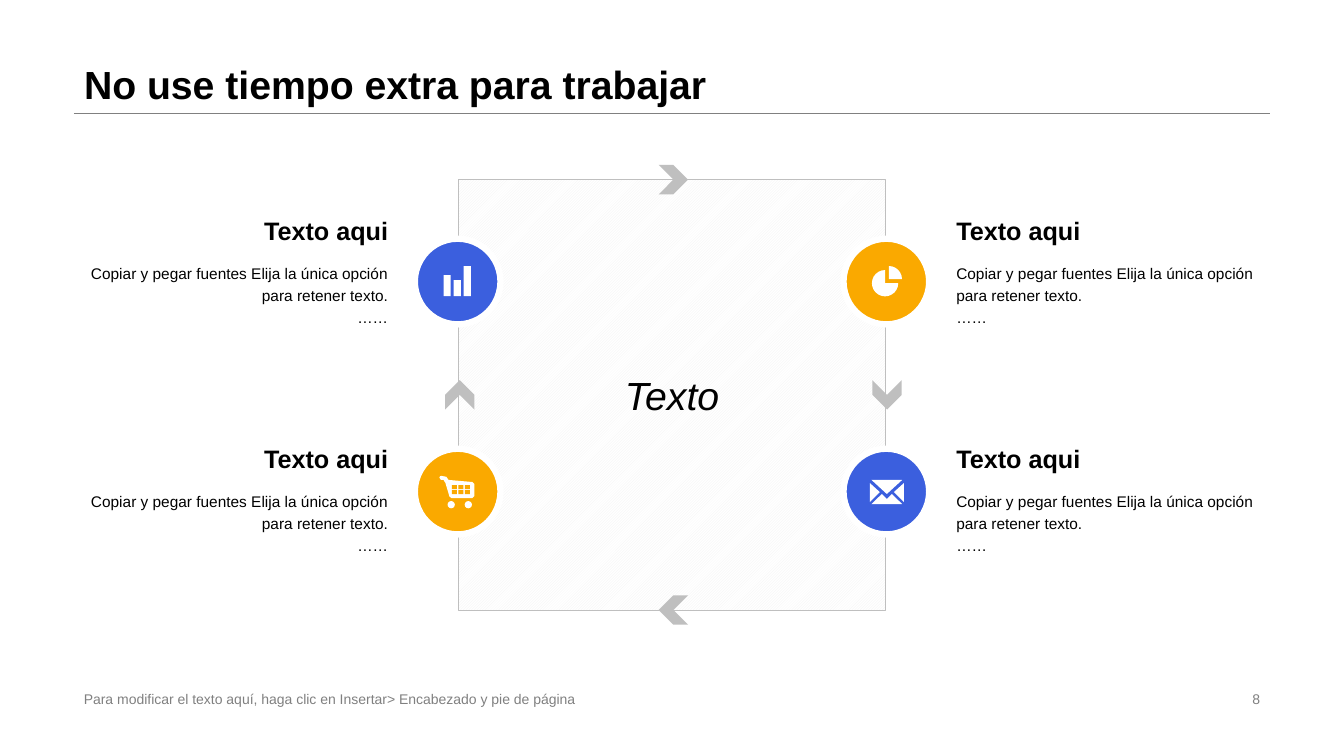
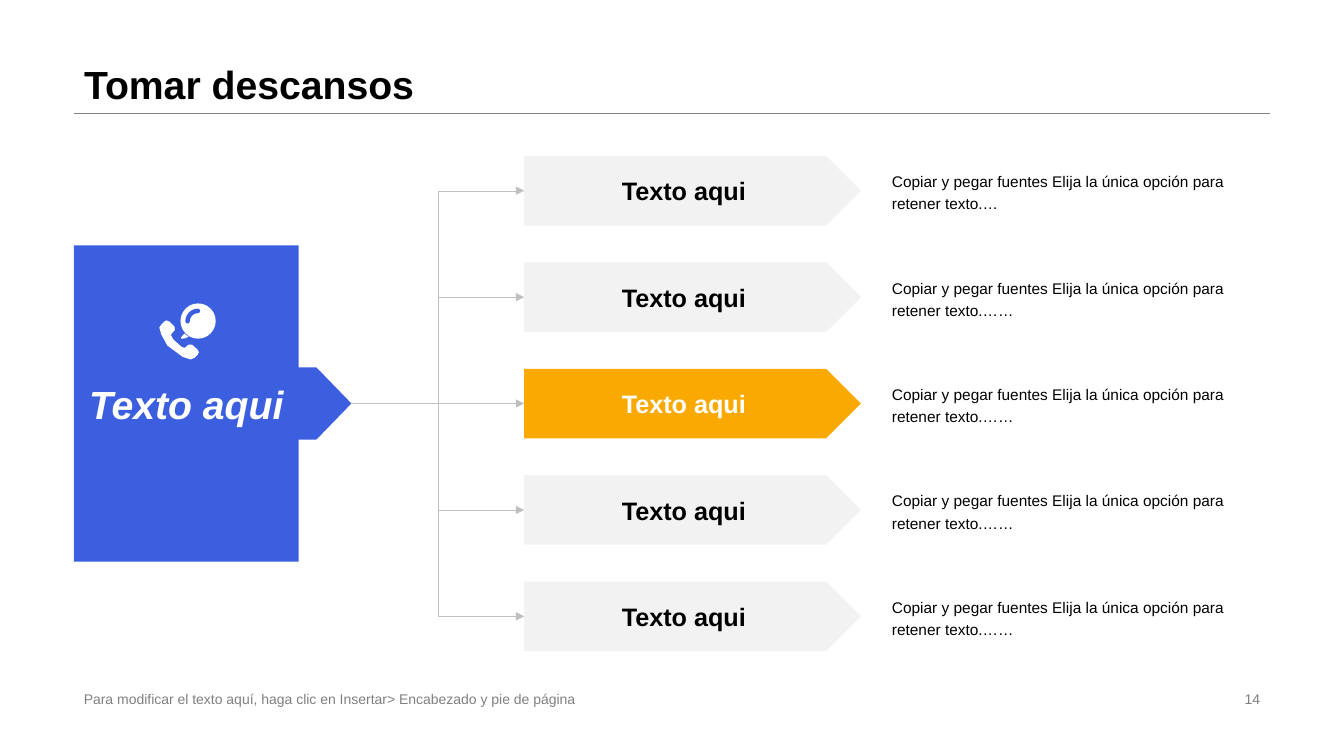
"""Build two Spanish template slides: a four-step cycle and a five-way branch."""
from dataclasses import dataclass

from lxml import etree
from pptx import Presentation
from pptx import util as u
from pptx.dml import color
from pptx.enum import dml, shapes, text
from pptx.oxml import ns

KIND = shapes.MSO_SHAPE
LINK = shapes.MSO_CONNECTOR
ALIGN = text.PP_ALIGN
ANCHOR = text.MSO_ANCHOR


@dataclass(frozen=True)
class Theme:
    """Colours, type sizes and page edges, lengths in points."""
    font: str = "Arial"
    ink: str = "000000"
    white: str = "FFFFFF"
    blue: str = "3B5FDE"
    gold: str = "FAA900"
    pale: str = "F2F2F2"
    edge: str = "BFBFBF"
    gray: str = "808080"
    big: int = 28
    head: int = 18
    body: int = 11
    note: int = 10
    hair: float = 0.25
    left: float = 52.8
    right: float = 907.2


T = Theme()
HEAD = "Texto aqui"
BODY = "Copiar y pegar fuentes Elija la única opción para retener texto."
FOOT = "Para modificar el texto aquí, haga clic en Insertar> Encabezado y pie de página"


def rgb(code):
    """Turn a hex code into a colour."""
    return color.RGBColor.from_string(code)


def put(item, **vals):
    """Set each named attribute on an item."""
    for name, val in vals.items():
        setattr(item, name, val)


def place(item, x, y, w, h):
    """Move and size an item."""
    put(item, left=u.Pt(x), top=u.Pt(y), width=u.Pt(w), height=u.Pt(h))


def write(item, lines, size, hue=T.ink, align=ALIGN.LEFT, anchor=ANCHOR.MIDDLE,
          gap=None, bold=False, slant=False):
    """Fill an item with formatted paragraphs."""
    frame = item.text_frame
    frame.text = "\n".join(lines)
    put(frame, word_wrap=True, auto_size=text.MSO_AUTO_SIZE.NONE, vertical_anchor=anchor)
    for para in frame.paragraphs:
        put(para, alignment=align)
        if gap:
            put(para, line_spacing=gap)
        for run in para.runs:
            put(run.font, name=T.font, size=u.Pt(size), bold=bold, italic=slant)
            run.font.color.rgb = rgb(hue)


def label(slide, box, lines, size, **form):
    """Add a text box."""
    item = slide.shapes.add_textbox(*map(u.Pt, box))
    write(item, lines, size, **form)


def paint(item, fill=None, line=None, width=T.hair):
    """Set the fill and outline, without a shadow."""
    item.shadow.inherit = False
    if fill:
        item.fill.solid()
        item.fill.fore_color.rgb = rgb(fill)
    else:
        item.fill.background()
    if line:
        item.line.color.rgb = rgb(line)
        item.line.width = u.Pt(width)
    else:
        item.line.fill.background()


def shape(slide, kind, box, fill=None, line=None, width=T.hair, adj=(), turn=0):
    """Add a preset shape."""
    item = slide.shapes.add_shape(kind, *map(u.Pt, box))
    for n, val in enumerate(adj):
        item.adjustments[n] = val
    item.rotation = turn
    paint(item, fill, line, width)
    return item


def poly(slide, x, y, dots, fill=T.white):
    """Add a closed outline with its dots measured from x, y."""
    dots = [(u.Pt(x + dx), u.Pt(y + dy)) for dx, dy in dots]
    pen = slide.shapes.build_freeform(*dots[0], scale=1.0)
    pen.add_line_segments(dots[1:], close=True)
    paint(pen.convert_to_shape(), fill)


def link(slide, start, end, hue, kind=LINK.STRAIGHT, arrow=False):
    """Add a hairline, with an arrowhead if asked."""
    item = slide.shapes.add_connector(kind, *map(u.Pt, start + end))
    item.line.color.rgb = rgb(hue)
    item.line.width = u.Pt(T.hair)
    props = item.element.spPr
    if arrow:
        etree.SubElement(props.find(ns.qn("a:ln")), ns.qn("a:tailEnd"), type="triangle")
    etree.SubElement(props, ns.qn("a:effectLst"))


def page(deck, title, number):
    """Add a slide with its title, rule, footer and number."""
    slide = deck.slides.add_slide(deck.slide_layouts[5])
    head = slide.shapes.title
    wide = T.right - T.left
    place(head, T.left, 0, wide, 80.6)
    write(head, [title], T.big, anchor=ANCHOR.BOTTOM, gap=0.9, bold=True)
    link(slide, (T.left, 80.6), (T.right, 80.6), T.gray)
    label(slide, (T.left, 491, 379, 16.6), [FOOT], T.note, hue=T.gray)
    label(slide, (T.right - 229, 491, 229, 16.6), [number], T.note,
          hue=T.gray, align=ALIGN.RIGHT)
    return slide


def bars(slide, x, y, hue):
    """Draw a bar chart icon."""
    for n, top in enumerate((-4.6, -1, -11)):
        shape(slide, KIND.RECTANGLE, (x - 10.1 + 7.2 * n, y + top, 5.2, 10.5 - top), T.white)


def pie(slide, x, y, hue):
    """Draw a pie chart icon with one slice pulled out."""
    for dx, dy, adj in ((-10.3, -8.2, (0, 162)), (-7.6, -11.1, (162, 0))):
        shape(slide, KIND.PIE, (x + dx, y + dy, 18.8, 18.8), T.white, adj=adj)


def cart(slide, x, y, hue):
    """Draw a shopping cart icon."""
    poly(slide, x, y, [
        (-13, -9.9), (-12.5, -11), (-11.5, -11.2), (-8, -10.5), (-6.5, -8.3),
        (10.6, -6.8), (11.9, -5.4), (11.9, 3.2), (10.4, 4.7), (-4.3, 4.7),
        (-5.8, 3.6), (-8.7, -6.1), (-10.1, -8.3), (-12, -8.4)])
    for col in range(3):
        for row in range(2):
            shape(slide, KIND.RECTANGLE,
                  (x - 4.1 + 4.6 * col, y - 4.6 + 3.6 * row, 3.6, 2.9), hue)
    for dx in (-7.2, 5):
        shape(slide, KIND.OVAL, (x + dx, y + 6.8, 5.2, 5.2), T.white)


def mail(slide, x, y, hue):
    """Draw an envelope icon."""
    for side in (-1, 1):
        poly(slide, x + 0.4, y, [(12.2 * side, -6.1), (12.2 * side, 7.6), (5 * side, 0.4)])
    poly(slide, x + 0.4, y, [(-11, -8.3), (11, -8.3), (0, 1.8)])
    poly(slide, x + 0.4, y, [(-11, 9), (-3.6, 1.8), (0, 5.4), (3.6, 1.8), (11, 9)])


def phone(slide, x, y, hue):
    """Draw a handset with a speech bubble."""
    poly(slide, x, y, [
        (5, 12.2), (7.2, 13), (8.6, 14.4), (10.8, 16.6), (11.1, 19), (8.6, 22),
        (8.4, 23), (10.1, 25.9), (15.8, 31), (18, 31.9), (20.9, 29.5), (23.4, 29.5),
        (27.4, 33.1), (28.2, 34.9), (27.4, 36.7), (25.2, 38.9), (22.3, 40.1),
        (16.6, 38.2), (5.8, 30.2), (1.4, 22.3), (0, 17.3), (1.4, 15.1), (3.6, 13)])
    shape(slide, KIND.OVAL, (x + 15.1, y, 25.2, 25.2), T.white)
    poly(slide, x, y, [(15.5, 24.3), (18, 21.6), (20.9, 23.8), (18.4, 25), (15.8, 25.2)])
    glint = shape(slide, KIND.ARC, (x + 20.2, y + 5.4, 14.8, 14.8),
                  line=hue, width=3.2, adj=(108, 162))
    glint.element.spPr.find(ns.qn("a:ln")).set("cap", "rnd")


def cycle(slide):
    """Draw the square loop with four badges and their texts."""
    mid, level, half, tall, disc, tip = 480, 282, 152.6, 153.7, 61.2, 21
    frame = shape(slide, KIND.RECTANGLE,
                  (mid - half, level - tall, 2 * half, 2 * tall), line=T.edge)
    frame.fill.patterned()
    frame.fill.pattern = dml.MSO_PATTERN.DARK_UPWARD_DIAGONAL
    frame.fill.fore_color.rgb = rgb(T.pale)
    frame.fill.back_color.rgb = rgb(T.white)
    write(frame, ["Texto"], T.big, align=ALIGN.CENTER, slant=True)

    for side, row, hue, icon in ((1, 0, T.gold, pie), (-1, 0, T.blue, bars),
                                 (1, 1, T.blue, mail), (-1, 1, T.gold, cart)):
        x, y = mid + 153.1 * side, 201.1 + 150 * row
        shape(slide, KIND.OVAL, (x - disc / 2, y - disc / 2, disc, disc), hue, T.white, 4.5)
        icon(slide, x, y, hue)
        wide = 231.2
        left = T.right - wide if side > 0 else T.left + 0.4
        top = 147.6 + 162.8 * row
        align = ALIGN.LEFT if side > 0 else ALIGN.RIGHT
        label(slide, (left, top, wide, 34.6), [HEAD], T.head, align=align, bold=True)
        label(slide, (left, top + 34.6, wide, 71.3), [BODY, "……"], T.body,
              align=align, anchor=ANCHOR.TOP, gap=1.2)

    for n, (dx, dy) in enumerate(((0, -1), (1, 0), (0, 1), (-1, 0))):
        x, y = mid + half * dx + 1, level + tall * dy
        shape(slide, KIND.CHEVRON, (x - tip / 2, y - tip / 2, tip, tip), T.edge, turn=90 * n)


def branch(slide):
    """Draw the callout and the five arrows it leads to."""
    top, step, tall, left, level = 111.4, 76, 49.7, 374.4, 288.2
    root = shape(slide, KIND.RIGHT_ARROW_CALLOUT, (T.left, level - 113, 198.2, 226),
                 T.blue, adj=(0.261, 0.13, 0.126, 0.81))
    write(root, [HEAD], T.big, hue=T.white, align=ALIGN.CENTER, bold=True, slant=True)
    phone(slide, 113.8, 216.7, T.blue)
    for n in range(5):
        y = top + step * n
        main = n == 2
        plate = shape(slide, KIND.PENTAGON, (left, y, 240.6, tall), T.gold if main else T.pale)
        write(plate, [HEAD], T.head, hue=T.white if main else T.ink,
              align=ALIGN.CENTER, bold=True)
        end = level if main else y + tall / 2
        link(slide, (T.left + 198.2, level), (left, end), T.edge,
             LINK.STRAIGHT if main else LINK.ELBOW, arrow=True)
        label(slide, (630, y, T.right - 630, tall), [BODY + ("……" if n else "…")],
              T.body, gap=1.2)


def main():
    """Make and save the deck."""
    deck = Presentation()
    put(deck, slide_width=u.Pt(960), slide_height=u.Pt(540))
    cycle(page(deck, "No use tiempo extra para trabajar", "8"))
    branch(page(deck, "Tomar descansos", "14"))
    deck.save("out.pptx")


if __name__ == "__main__":
    main()
